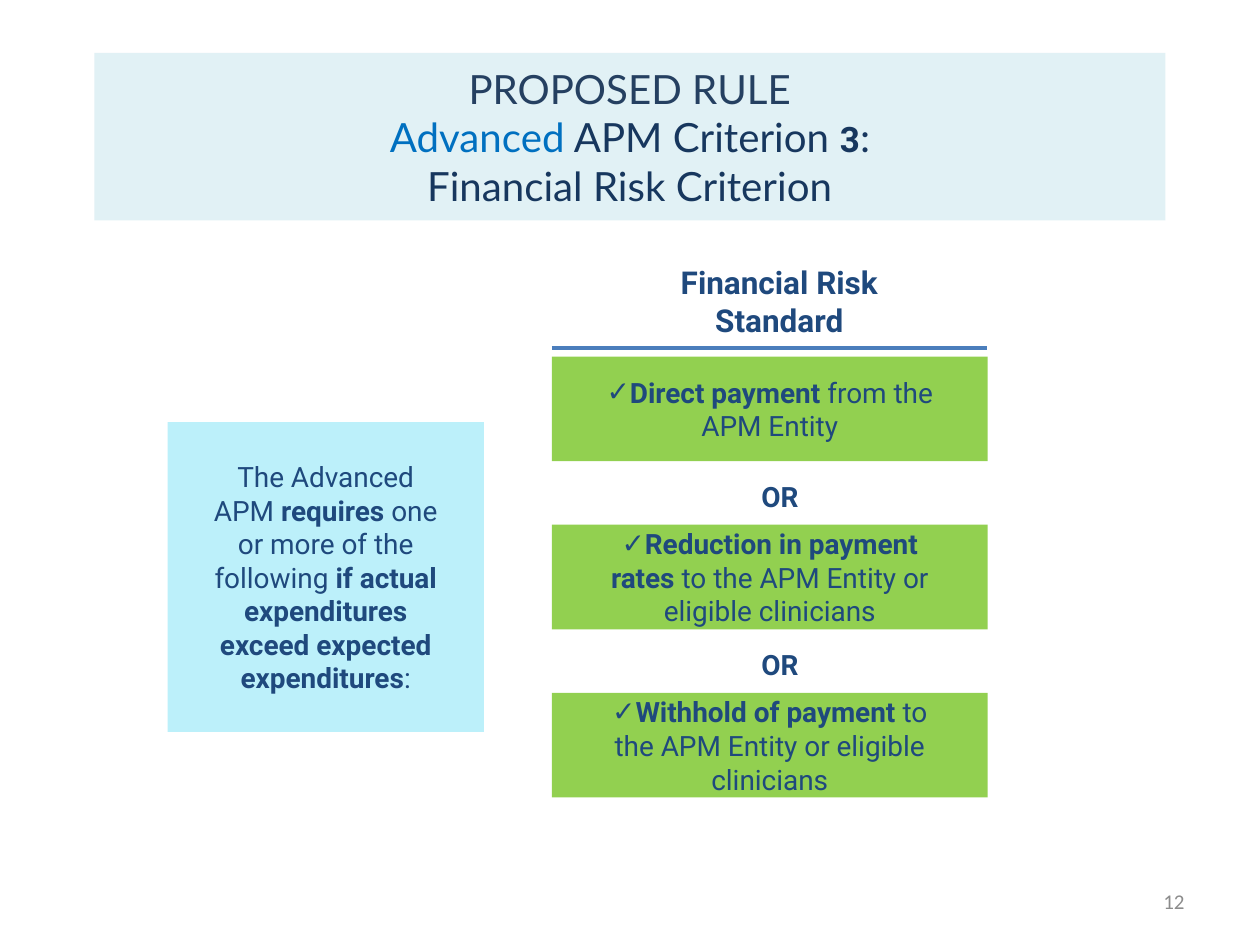
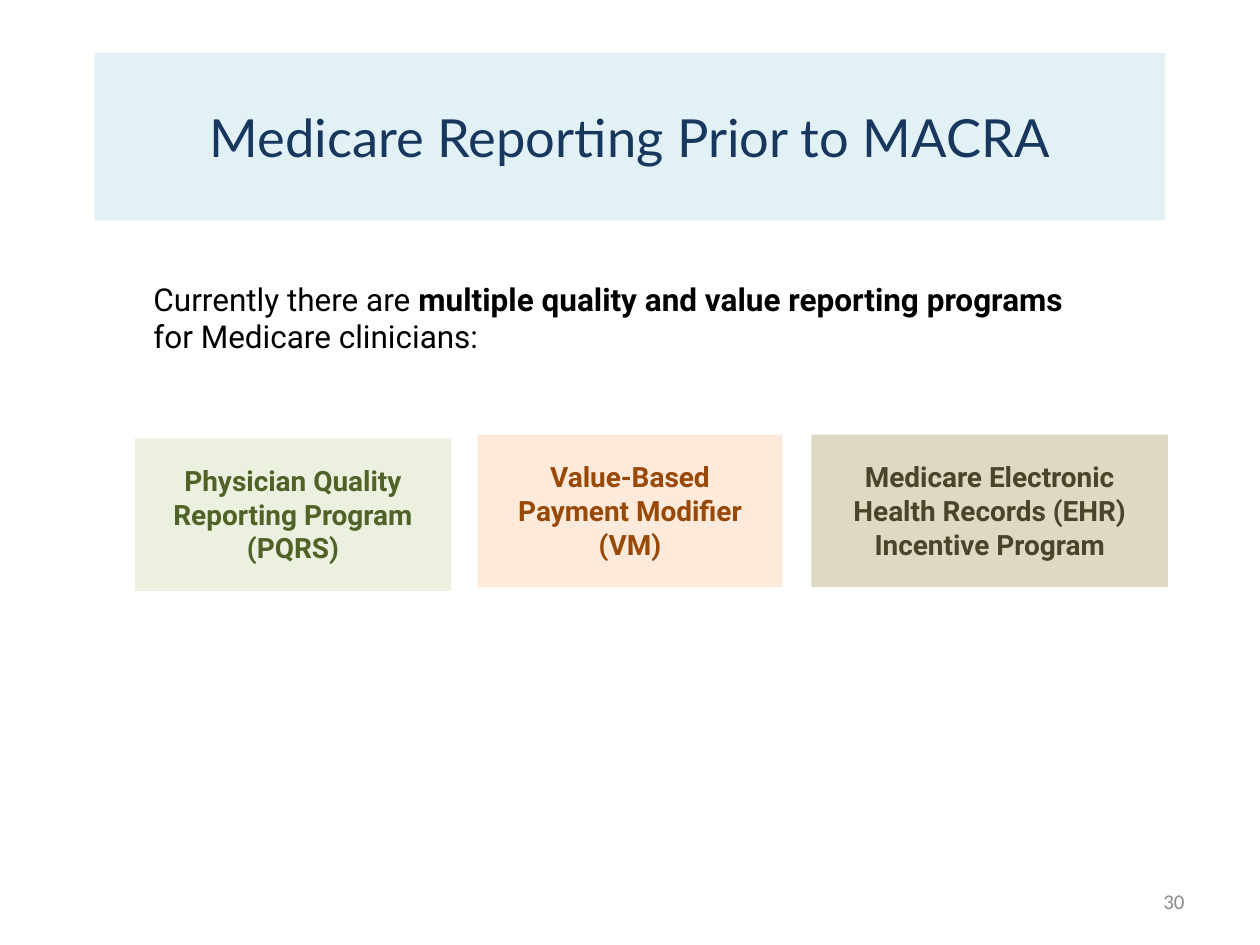
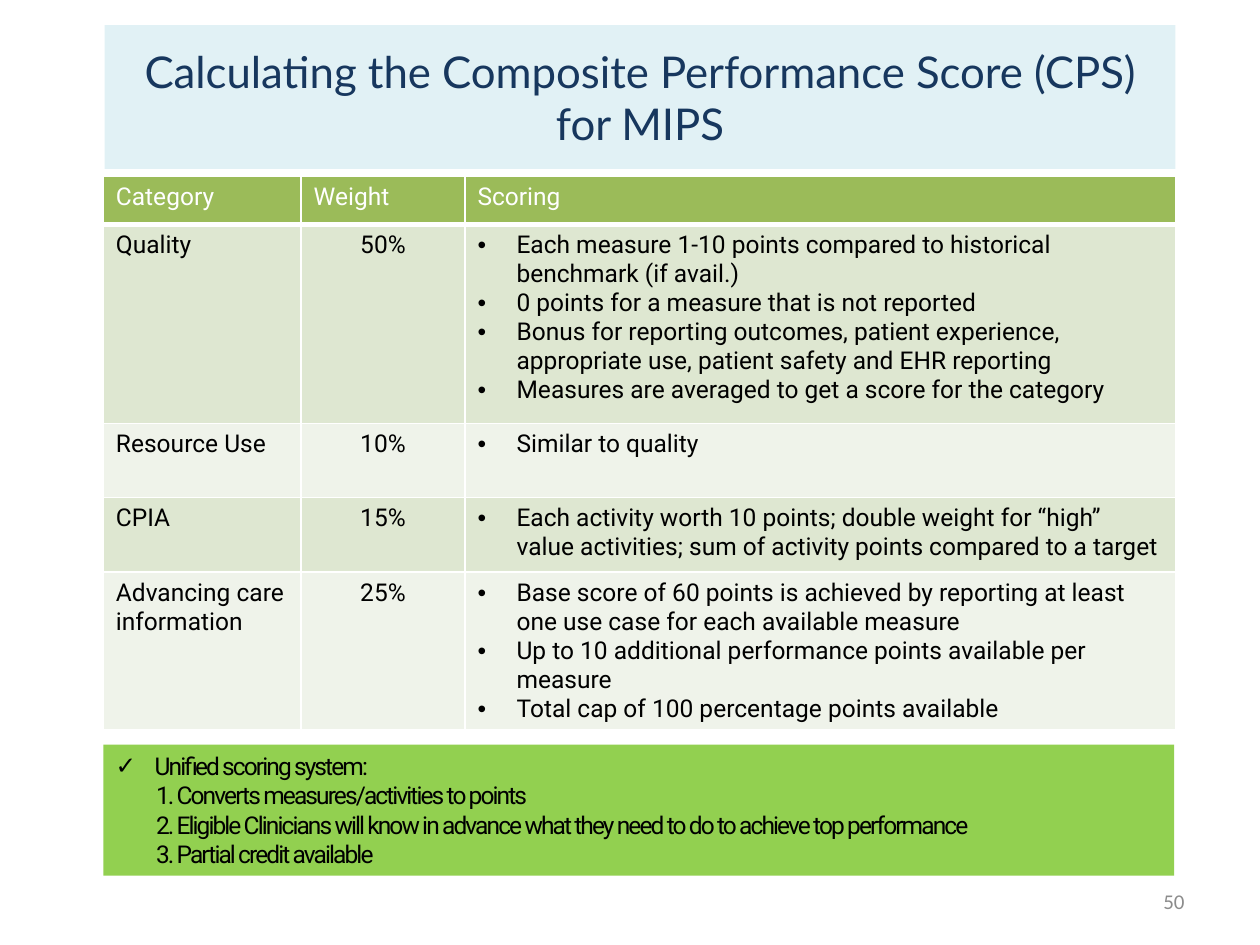
from lxml import etree
from pptx import Presentation
from pptx.dml.color import RGBColor
from pptx.enum.shapes import MSO_CONNECTOR, MSO_SHAPE
from pptx.enum.text import MSO_ANCHOR, PP_ALIGN
from pptx.oxml.ns import qn
from pptx.util import Inches, Pt

LEFT, CENTER, RIGHT = PP_ALIGN.LEFT, PP_ALIGN.CENTER, PP_ALIGN.RIGHT
TOP, MIDDLE = MSO_ANCHOR.TOP, MSO_ANCHOR.MIDDLE
RECTANGLE, STRAIGHT = MSO_SHAPE.RECTANGLE, MSO_CONNECTOR.STRAIGHT

COLUMNS, ROWS = 100, 75
NAVY, BLUE, BLACK, WHITE = "17375E", "1F497D", "000000", "FFFFFF"
GREEN, BAND, GRAY = "92D050", "DBEEF4", "8C8C8C"
TITLE_FONT, BODY_FONT, NUMBER_FONT = "Lato", "Roboto", "Calibri"
BOLD = {"bold": True}
DEFAULT_INSETS, WIDE_INSETS, EVEN_INSETS = (0.1, 0.05), (0.3, 0.1), (0.2, 0.2)
HANGING = (0.31, -0.31)


def rgb(value):
    return RGBColor.from_string(value)


def child(parent, tag, **attributes):
    return etree.SubElement(parent, qn(tag), attributes)


class Deck:
    """Holds the shared style and the slide being filled."""

    def __init__(self):
        self.presentation = Presentation()
        self.presentation.slide_width = Inches(10)
        self.presentation.slide_height = Inches(7.5)
        self.slide = None

    def new_slide(self):
        self.slide = self.presentation.slides.add_slide(self.presentation.slide_layouts[6])

    def place(self, left, top, width, height):
        column = self.presentation.slide_width / COLUMNS
        row = self.presentation.slide_height / ROWS
        return [round(n) for n in (left * column, top * row, width * column, height * row)]

    def runs(self, paragraph, content, **style):
        parts = [content] if isinstance(content, str) else content
        for part in parts:
            text, changes = (part, {}) if isinstance(part, str) else part
            look = {"font": BODY_FONT, "size": 16, "color": BLUE, "bold": False, **style, **changes}
            run = paragraph.add_run()
            run.text = text
            run.font.name = look["font"]
            run.font.size = Pt(look["size"])
            run.font.bold = look["bold"]
            run.font.color.rgb = rgb(look["color"])
            if "spacing" in look:
                run.font._element.set("spc", str(round(look["spacing"] * 100)))

    def layout(self, paragraph, bullet=None, indent=(0, 0)):
        properties = paragraph._p.get_or_add_pPr()
        margin, first_line = indent
        properties.set("marL", str(Inches(margin)))
        properties.set("indent", str(Inches(first_line)))
        if bullet:
            child(properties, "a:buFont", typeface="Arial")
            child(properties, "a:buChar", char=bullet)

    def fill_text(self, frame, contents, align=CENTER, after=0, bullet=None, indent=(0, 0),
                  **style):
        for index, content in enumerate(contents):
            paragraph = frame.add_paragraph() if index else frame.paragraphs[0]
            paragraph.alignment = align
            if after:
                paragraph.space_after = Pt(after)
            self.layout(paragraph, bullet, indent)
            self.runs(paragraph, content, **style)

    def frame(self, shape, anchor, insets):
        frame = shape.text_frame
        frame.word_wrap = True
        frame.vertical_anchor = anchor
        frame.margin_left = frame.margin_right = Inches(insets[0])
        frame.margin_top = frame.margin_bottom = Inches(insets[1])
        return frame

    def text(self, area, contents, anchor=MIDDLE, insets=DEFAULT_INSETS, **style):
        shape = self.slide.shapes.add_textbox(*self.place(*area))
        self.fill_text(self.frame(shape, anchor, insets), contents, **style)

    def box(self, area, fill, contents, anchor=MIDDLE, insets=DEFAULT_INSETS, **style):
        shape = self.slide.shapes.add_shape(RECTANGLE, *self.place(*area))
        shape.shadow.inherit = False
        shape.fill.solid()
        shape.fill.fore_color.rgb = rgb(fill)
        shape.line.fill.background()
        self.fill_text(self.frame(shape, anchor, insets), contents, **style)
        return shape

    def title(self, contents, size, area=(7.5, 4.2, 85, 13.3)):
        band = self.box(area, BAND, contents, font=TITLE_FONT, size=size, color=NAVY)
        color = band._element.spPr.find(qn("a:solidFill")).find(qn("a:srgbClr"))
        child(color, "a:alpha", val="82000")

    def page_number(self, number):
        self.text((71.7, 69.5, 23.3, 4), [str(number)], align=RIGHT,
                  font=NUMBER_FONT, size=12, color=GRAY)

    def rule(self, left, top, width, color, weight):
        x, y, length, _ = self.place(left, top, width, 0)
        connector = self.slide.shapes.add_connector(STRAIGHT, x, y, x + length, y)
        connector.line.color.rgb = rgb(color)
        connector.line.width = Pt(weight)
        child(connector._element.spPr, "a:effectLst")

    def cell(self, cell, contents, fill, bottom, **style):
        self.fill_text(cell.text_frame, contents, size=14, **style)
        properties = cell._tc.get_or_add_tcPr()
        for side in "LRTB":
            weight = bottom if side == "B" else 1
            line = child(properties, f"a:ln{side}", w=str(Pt(weight)))
            child(child(line, "a:solidFill"), "a:srgbClr", val=WHITE)
        cell.fill.solid()
        cell.fill.fore_color.rgb = rgb(fill)

    def table(self, left, top, widths, heights, header, records):
        area = self.place(left, top, sum(widths), sum(heights))
        table = self.slide.shapes.add_table(len(heights), len(widths), *area).table
        for column, width in zip(table.columns, widths):
            column.width = self.place(0, 0, width, 0)[2]
        for row, height in zip(table.rows, heights):
            row.height = self.place(0, 0, 0, height)[3]
        for index, label in enumerate(header):
            self.cell(table.cell(0, index), [label], "9BBB59", 3, align=LEFT, color=WHITE)
        for row, (category, weight, scoring) in enumerate(records, 1):
            fill = "DEE7D1" if row % 2 else "EFF3EA"
            self.cell(table.cell(row, 0), [category], fill, 1, align=LEFT, color=BLACK)
            self.cell(table.cell(row, 1), [weight], fill, 1, color=BLACK)
            self.cell(table.cell(row, 2), scoring, fill, 1, align=LEFT, color=BLACK,
                      bullet="•", indent=HANGING)


def financial_risk(deck):
    deck.new_slide()
    deck.page_number(12)
    standards = [
        [("Direct payment ", BOLD), "from the APM Entity"],
        [("Reduction in payment rates ", BOLD), "to the APM Entity or eligible clinicians"],
        [("Withhold of payment", BOLD), " to the APM Entity or eligible clinicians"],
    ]
    padded = {"insets": WIDE_INSETS, "after": 6}
    first_top, step = 28.3, 13.35
    deck.text((45.8, 20, 32.1, 7.8), ["Financial Risk Standard"], size=18, bold=True, **padded)
    deck.rule(43.8, 27.6, 34.5, "4B7EBC", 2.25)
    for index, standard in enumerate(standards):
        top = first_top + index * step
        if index:
            deck.text((45.9, top - 6.15, 32, 7.8), ["OR"], bold=True, **padded)
        deck.box((43.8, top, 34.6, 8.3), GREEN, [standard], bullet="✓", **padded)
    deck.title([
        [("PROPOSED RULE", {"color": "254061"})],
        [("Advanced", {"color": "0070C0"}), " APM Criterion ",
         ("3", {"font": BODY_FONT, "size": 20, "bold": True}), ":"],
        "Financial Risk Criterion",
    ], 23)
    deck.box((13.3, 33.5, 25.1, 24.6), "BCF0FA", [[
        "The Advanced APM ", ("requires", BOLD), " one or more of the following ",
        ("if actual expenditures exceed expected expenditures", BOLD), ":",
    ]], **padded)


def prior_reporting(deck):
    deck.new_slide()
    deck.title(["Medicare Reporting Prior to MACRA"], 30)
    programs = [
        (10.7, 34.8, 25.1, "EBF1DE", "4F6228", "Physician Quality Reporting Program (PQRS)"),
        (37.9, 34.5, 24.2, "FDEADA", "984807", "Value-Based Payment Modifier (VM)"),
        (64.4, 34.5, 28.3, "DDD9C3", "4A452A",
         "Medicare Electronic Health Records (EHR) Incentive Program"),
    ]
    for left, top, width, fill, color, name in programs:
        deck.box((left, top, width, 12.1), fill, [name], anchor=TOP, insets=EVEN_INSETS,
                 after=10, color=color, bold=True)
    deck.page_number(30)
    deck.text((11.2, 21.7, 77.7, 7.1), [[
        "Currently there are ", ("multiple quality and value reporting programs ", BOLD),
        "for Medicare clinicians:",
    ]], anchor=TOP, align=LEFT, size=18, color=BLACK)


def composite_score(deck):
    deck.new_slide()
    records = [
        ("Quality", "50%", [
            "Each measure 1-10 points compared to historical benchmark (if avail.)",
            "0 points for a measure that is not reported",
            "Bonus for reporting outcomes, patient experience, appropriate use, "
            "patient safety and EHR reporting",
            "Measures are averaged to get a score for the category",
        ]),
        ("Resource Use", "10%", ["Similar to quality"]),
        ("CPIA", "15%", [
            "Each activity worth 10 points; double weight for “high” value activities; "
            "sum of activity points compared to a target",
        ]),
        ("Advancing care information", "25%", [
            "Base score of 60 points is achieved by reporting at least one use case "
            "for each available measure",
            "Up to 10 additional performance points available per measure",
            "Total cap of 100 percentage points available",
        ]),
    ]
    deck.table(8.2, 14, (15.7, 13, 56.4), (3.8, 15.8, 5.9, 5.9, 12.4),
               ("Category", "Weight", "Scoring"), records)
    deck.page_number(50)
    deck.title(["Calculating the Composite Performance Score (CPS) for MIPS"], 25,
               (8.3, 2, 85, 11.4))
    style = {"size": 14, "color": BLACK, "spacing": -1.1}
    summary = deck.box((8.2, 59.1, 85, 10.4), GREEN, ["Unified scoring system:"], anchor=TOP,
                       align=LEFT, bullet="✓", indent=HANGING, **style)
    points = [
        ("1. Converts measures/activities to points", (0.32, 0)),
        ("2. Eligible Clinicians will know in advance what they need to do "
         "to achieve top performance", (0.44, -0.12)),
        ("3. Partial credit available", (0, 0.32)),
    ]
    for text, indent in points:
        paragraph = summary.text_frame.add_paragraph()
        paragraph.alignment = LEFT
        deck.layout(paragraph, indent=indent)
        deck.runs(paragraph, text, **style)


def main():
    deck = Deck()
    financial_risk(deck)
    prior_reporting(deck)
    composite_score(deck)
    deck.presentation.save("out.pptx")


if __name__ == "__main__":
    main()
